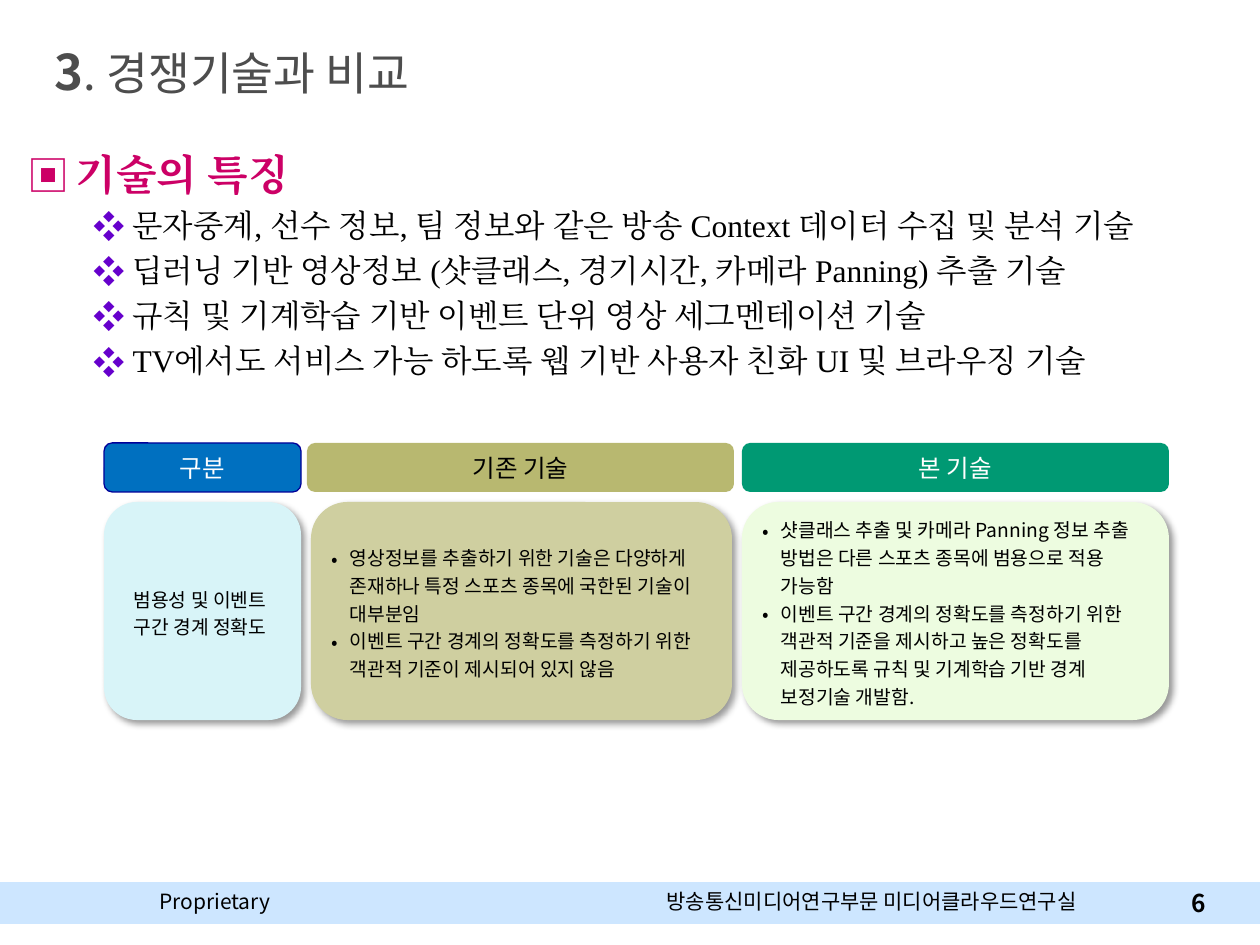
"""Build the slide that compares the technology with its rivals."""
from lxml.etree import SubElement as Sub
from pptx import Presentation
from pptx.dml.color import RGBColor
from pptx.enum.shapes import MSO_SHAPE as Kind
from pptx.enum.text import MSO_ANCHOR as Anchor, MSO_AUTO_SIZE as Auto, PP_ALIGN as Align
from pptx.oxml.ns import qn
from pptx.util import Emu, Pt

SANS, SERIF = "Noto Sans CJK KR", "Times New Roman"
hue = RGBColor.from_string


def px(*nums):
    return [Emu(round(n * 914400 / 126)) for n in nums]


def style(para, size, color, bold=False, face=SANS, mark="", ind=0, hang=0, tint=None):
    if mark:
        props = para._p.get_or_add_pPr()
        props.set("marL", str(px(ind)[0]))
        props.set("indent", str(-px(hang)[0]))
        if tint:
            Sub(Sub(props, qn("a:buClr")), qn("a:srgbClr"), val=tint)
        Sub(props, qn("a:buFont"), typeface=SANS)
        Sub(props, qn("a:buChar"), char=mark)
    for run in para.runs:
        font = run.font
        font.size, font.bold, font.name = Pt(size), bold, face
        font.color.rgb = hue(color)
        Sub(run._r.get_or_add_rPr(), qn("a:ea"), typeface=face)


deck = Presentation()
deck.slide_width, deck.slide_height = px(1260, 945)
slide = deck.slides.add_slide(deck.slide_layouts[1])
shapes = slide.shapes
title, body = slide.placeholders

band = shapes.add_shape(Kind.RECTANGLE, *px(0, 882, 1260, 42))
band.shadow.inherit = False
band.fill.solid()
band.fill.fore_color.rgb = hue("CDE6FF")
band.line.fill.background()

notes = [
    ("Proprietary", (147, 882, 168, 38), 12, False, Align.LEFT, Anchor.TOP),
    ("방송통신미디어연구부문 미디어클라우드연구실", (581, 882, 582, 64), 12, False, Align.CENTER, Anchor.TOP),
    ("6", (1158, 882, 60, 42), 14, True, Align.RIGHT, Anchor.MIDDLE),
]
for text, spot, size, bold, align, anchor in notes:
    frame = shapes.add_textbox(*px(*spot)).text_frame
    frame.word_wrap = True
    frame.vertical_anchor = anchor
    frame.text = text
    para = frame.paragraphs[0]
    para.alignment = align
    style(para, size, "000000", bold)

title.left, title.top, title.width, title.height = px(42, 35, 987, 72)
frame = title.text_frame
frame.auto_size = Auto.NONE
frame.vertical_anchor = Anchor.MIDDLE
para = frame.paragraphs[0]
para.alignment = Align.LEFT
for part in ("3", ". 경쟁기술과 비교"):
    para.add_run().text = part
style(para, 26, "4D4D4D")
lead = para.runs[0].font
lead.size, lead.bold = Pt(28), True

body.left, body.top, body.width, body.height = px(15, 142, 1211, 72)
frame = body.text_frame
frame.auto_size = Auto.NONE
frame.vertical_anchor = Anchor.TOP
head = frame.paragraphs[0]
head.text = "기술의 특징"
head.alignment = Align.JUSTIFY
head.space_before = Pt(0)
style(head, 24, "CC0066", True, SERIF, "▣", 48, 48, "CC0066")
for text in (
    "문자중계, 선수 정보, 팀 정보와 같은 방송 Context 데이터 수집 및 분석 기술",
    "딥러닝 기반 영상정보 (샷클래스, 경기시간, 카메라 Panning) 추출 기술",
    "규칙 및 기계학습 기반 이벤트 단위 영상 세그멘테이션 기술",
    "TV에서도 서비스 가능 하도록 웹 기반 사용자 친화 UI 및 브라우징 기술",
):
    para = frame.add_paragraph()
    para.text = text
    para.level = 1
    para.alignment = Align.JUSTIFY
    para.space_before = Pt(4.2)
    style(para, 18, "000000", False, SERIF, "❖", 105, 39, "6600CC")

tabs = [
    ("구분", 104, 197, "0070C0", "FFFFFF", "000099"),
    ("기존 기술", 307, 427, "B8B870", "000000", None),
    ("본 기술", 742, 427, "009973", "FFFFFF", None),
]
for text, left, width, fill, ink, edge in tabs:
    tab = shapes.add_shape(Kind.ROUNDED_RECTANGLE, *px(left, 443, width, 49))
    tab.shadow.inherit = False
    tab.fill.solid()
    tab.fill.fore_color.rgb = hue(fill)
    if edge:
        tab.line.color.rgb = hue(edge)
        tab.line.width = Pt(0.75)
    else:
        tab.line.fill.background()
    frame = tab.text_frame
    frame.word_wrap = False
    frame.margin_left = frame.margin_right = 0
    frame.vertical_anchor = Anchor.MIDDLE
    frame.text = text
    para = frame.paragraphs[0]
    para.alignment = Align.CENTER
    style(para, 14, ink)

cards = [
    (104, 197, "D8F4F8", 5, "", ["범용성 및 이벤트 구간 경계 정확도"]),
    (311, 421, "CFCFA0", 10, "•", [
        "영상정보를 추출하기 위한 기술은 다양하게 존재하나 특정 스포츠 종목에 국한된 기술이 대부분임",
        "이벤트 구간 경계의 정확도를 측정하기 위한 객관적 기준이 제시되어 있지 않음",
    ]),
    (742, 427, "EDFCE0", 10, "•", [
        "샷클래스 추출 및 카메라 Panning 정보 추출 방법은 다른 스포츠 종목에 범용으로 적용 가능함",
        "이벤트 구간 경계의 정확도를 측정하기 위한 객관적 기준을 제시하고 높은 정확도를 "
        "제공하도록 규칙 및 기계학습 기반 경계 보정기술 개발함.",
    ]),
]
for left, width, fill, pad, mark, lines in cards:
    card = shapes.add_shape(Kind.ROUNDED_RECTANGLE, *px(left, 502, width, 218))
    card.fill.solid()
    card.fill.fore_color.rgb = hue(fill)
    card.line.fill.background()
    card.shadow.inherit = False
    glow = Sub(card._element.spPr.find(qn("a:effectLst")), qn("a:outerShdw"),
               blurRad=str(Pt(4)), dist=str(Pt(3)), dir="2700000", algn="tl", rotWithShape="0")
    Sub(Sub(glow, qn("a:srgbClr"), val="000000"), qn("a:alpha"), val="40000")
    frame = card.text_frame
    frame.word_wrap = True
    frame.vertical_anchor = Anchor.MIDDLE
    frame.margin_left, frame.margin_right = px(pad, 10)
    frame.margin_top = frame.margin_bottom = 0
    frame.text = "\n".join(lines)
    for para in frame.paragraphs:
        style(para, 11, "000000", mark=mark, ind=18, hang=18)
        para.alignment = Align.LEFT if mark else Align.CENTER
        para.line_spacing = 1.2

deck.save("out.pptx")
